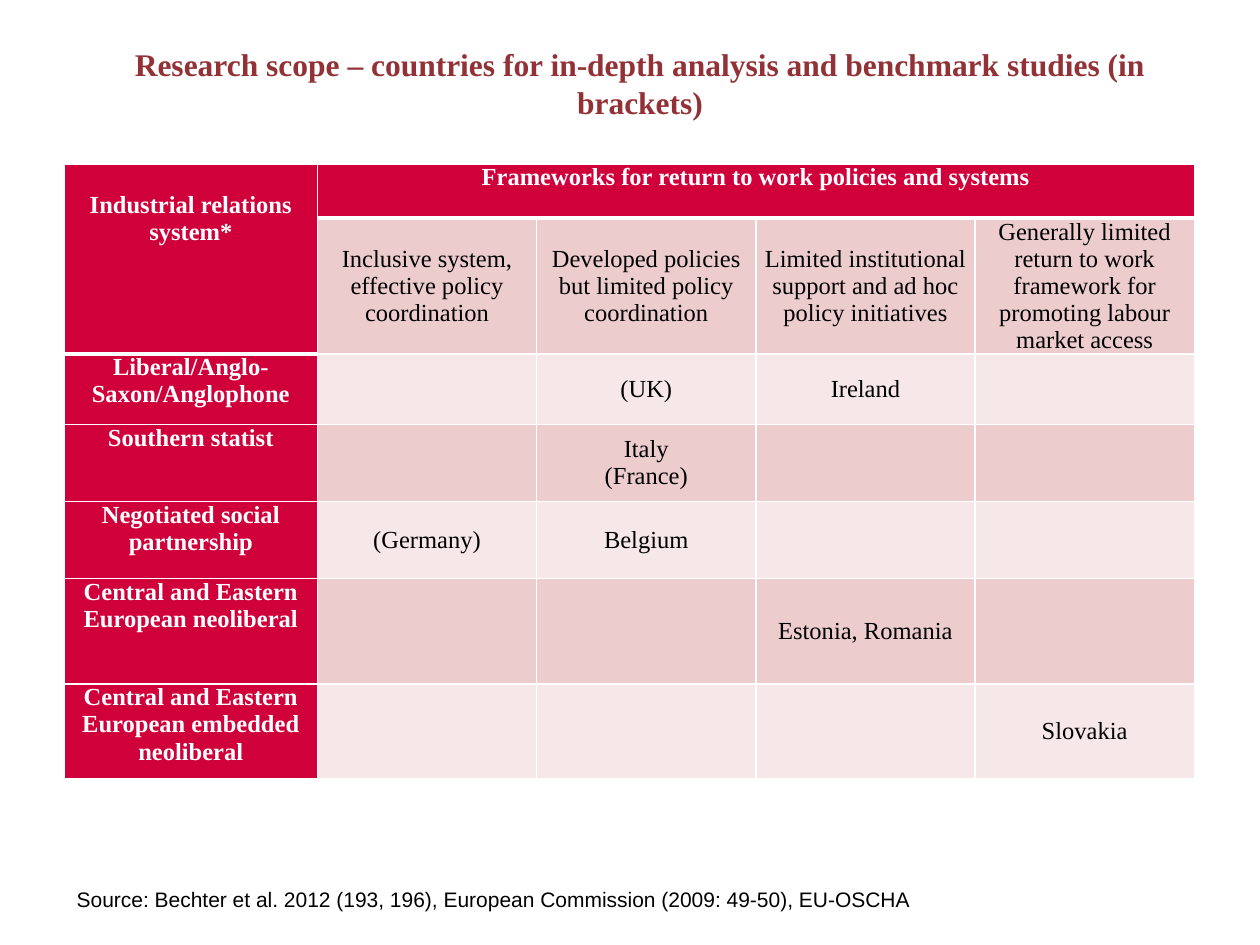
import lxml.etree
import pptx
import pptx.dml.color
import pptx.enum.text
import pptx.oxml.ns
import pptx.util
from dataclasses import dataclass

Inches = pptx.util.Inches
Pt = pptx.util.Pt
Align = pptx.enum.text.PP_ALIGN
Anchor = pptx.enum.text.MSO_ANCHOR
AutoSize = pptx.enum.text.MSO_AUTO_SIZE


@dataclass(frozen=True)
class Theme:
    serif: str = "Times New Roman"
    sans: str = "Arial"
    title: str = "923236"
    header: str = "CF003A"
    dark_band: str = "EDCCCE"
    light_band: str = "F6E7E8"
    ink: str = "000000"
    white: str = "FFFFFF"
    title_size: int = 18
    table_size: int = 14
    source_size: int = 12


def rgb(value):
    return pptx.dml.color.RGBColor.from_string(value)


def set_all(target, values):
    for name, value in values.items():
        setattr(target, name, value)


class SlideBuilder:
    def __init__(self, slide, theme):
        self.slide = slide
        self.theme = theme

    def fill_frame(self, frame, text, align, font, size, color, bold=False):
        frame.text = text
        for paragraph in frame.paragraphs:
            paragraph.alignment = align
            set_all(paragraph.font, {"name": font, "size": Pt(size), "bold": bold})
            paragraph.font.color.rgb = rgb(color)

    def text(self, box, text, frame_format, **style):
        frame = self.slide.shapes.add_textbox(*map(Inches, box)).text_frame
        set_all(frame, frame_format)
        self.fill_frame(frame, text, **style)

    def border(self, cell, edges):
        properties = cell._tc.get_or_add_tcPr()
        for edge, width in edges.items():
            line = lxml.etree.SubElement(
                properties, pptx.oxml.ns.qn(f"a:ln{edge}"), w=str(Pt(width))
            )
            solid = lxml.etree.SubElement(line, pptx.oxml.ns.qn("a:solidFill"))
            lxml.etree.SubElement(
                solid, pptx.oxml.ns.qn("a:srgbClr"), val=self.theme.white
            )

    def cell(self, cell, text, fill, edges, heading):
        self.border(cell, edges)
        cell.fill.solid()
        cell.fill.fore_color.rgb = rgb(fill)
        set_all(cell, {
            "margin_left": Inches(0.07), "margin_right": Inches(0.07),
            "margin_top": 0, "margin_bottom": 0,
            "vertical_anchor": Anchor.TOP if heading else Anchor.MIDDLE,
        })
        self.fill_frame(
            cell.text_frame, text, Align.CENTER, self.theme.serif,
            self.theme.table_size,
            self.theme.white if heading else self.theme.ink, heading,
        )

    def table(self, left, top, widths, heights, rows):
        theme = self.theme
        table = self.slide.shapes.add_table(
            len(heights), len(widths), Inches(left), Inches(top),
            Inches(sum(widths)), Inches(sum(heights)),
        ).table
        set_all(table, {"first_row": False, "horz_banding": False})
        for column, width in zip(table.columns, widths):
            column.width = Inches(width)
        for row, height in zip(table.rows, heights):
            row.height = Inches(height)
        for r, texts in enumerate(rows):
            band = theme.dark_band if r % 2 else theme.light_band
            for c, text in enumerate(texts):
                heading = r == 0 or c == 0
                header_end = 1 if c == 0 else 0
                edges = {
                    "L": 1, "R": 1,
                    "T": 3 if r == header_end + 1 else 1,
                    "B": 3 if r == header_end else 1,
                }
                fill = theme.header if heading else band
                self.cell(table.cell(r, c), text, fill, edges, heading)
        table.cell(0, 0).merge(table.cell(1, 0))
        table.cell(0, 1).merge(table.cell(0, len(widths) - 1))
        table.cell(0, 0).margin_top = Inches(0.22)


FRAMEWORKS = [
    ["Industrial relations system*",
     "Frameworks for return to work policies and systems", "", "", ""],
    ["",
     "Inclusive system, effective policy coordination",
     "Developed policies but limited policy coordination",
     "Limited institutional support and ad hoc policy initiatives",
     "Generally limited return to work framework for promoting labour market access"],
    ["Liberal/Anglo-Saxon/Anglophone", "", "(UK)", "Ireland", ""],
    ["Southern statist", "", "Italy\n(France)", "", ""],
    ["Negotiated social partnership", "(Germany)", "Belgium", "", ""],
    ["Central and Eastern European neoliberal", "", "", "Estonia, Romania", ""],
    ["Central and Eastern European embedded neoliberal", "", "", "", "Slovakia"],
]


def main():
    theme = Theme()
    deck = pptx.Presentation()
    set_all(deck, {"slide_width": Inches(10), "slide_height": Inches(7.5)})
    builder = SlideBuilder(deck.slides.add_slide(deck.slide_layouts[6]), theme)
    builder.table(
        0.51, 1.3, [2.01] + [1.74] * 4,
        [0.43, 1.08, 0.56, 0.61, 0.61, 0.84, 0.75], FRAMEWORKS,
    )
    builder.text(
        (0.51, 6.99, 6.91, 0.3),
        "Source: Bechter et al. 2012 (193, 196), European Commission (2009: 49-50), EU-OSCHA",
        {"word_wrap": False, "auto_size": AutoSize.SHAPE_TO_FIT_TEXT,
         "vertical_anchor": Anchor.MIDDLE},
        align=Align.LEFT, font=theme.sans, size=theme.source_size, color=theme.ink,
    )
    builder.text(
        (0.68, 0.31, 8.8, 0.71),
        "Research scope – countries for in-depth analysis and benchmark studies (in brackets)",
        {"word_wrap": True, "auto_size": AutoSize.SHAPE_TO_FIT_TEXT},
        align=Align.CENTER, font=theme.serif, size=theme.title_size,
        color=theme.title, bold=True,
    )
    deck.save("out.pptx")


if __name__ == "__main__":
    main()
